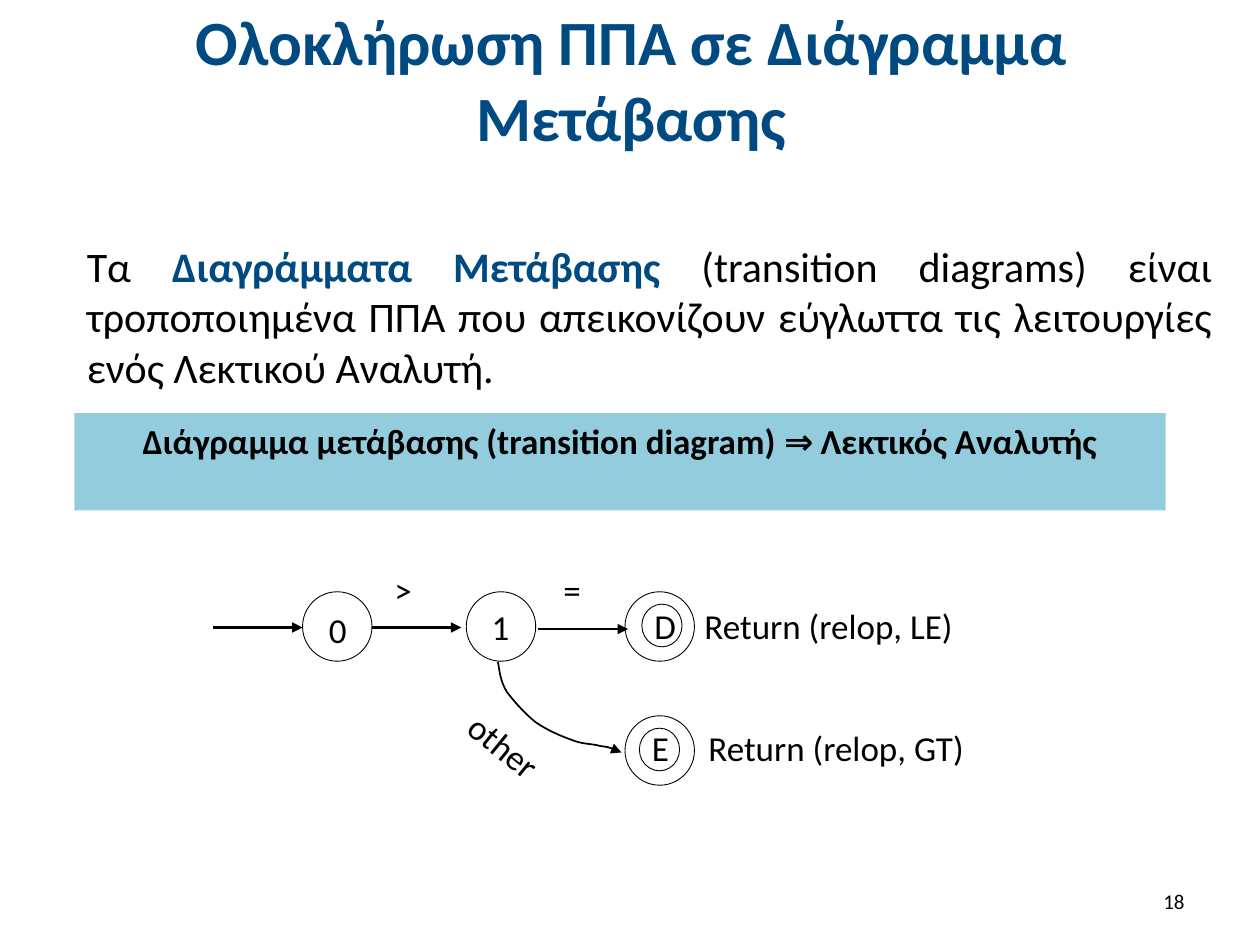
from lxml import etree
from pptx import Presentation
from pptx.dml.color import RGBColor
from pptx.enum.shapes import MSO_CONNECTOR, MSO_SHAPE
from pptx.enum.text import MSO_ANCHOR, PP_ALIGN
from pptx.oxml.ns import qn
from pptx.util import Cm, Pt

BLUE = RGBColor(0x00, 0x4A, 0x82)
BLACK = RGBColor(0, 0, 0)
WHITE = RGBColor(0xFF, 0xFF, 0xFF)
AQUA = RGBColor(0x93, 0xCD, 0xDD)
LEFT, MID, RIGHT, FULL = PP_ALIGN.LEFT, PP_ALIGN.CENTER, PP_ALIGN.RIGHT, PP_ALIGN.JUSTIFY
TOP, MIDDLE = MSO_ANCHOR.TOP, MSO_ANCHOR.MIDDLE
OVAL, LINE = MSO_SHAPE.OVAL, MSO_CONNECTOR.STRAIGHT

RING = 1.4         # diameter of a state
CORE = (0.81, 0.86)  # inner ring of a final state
SIGN = (0.94, 1.12)  # box of a one-letter label


def put_text(slide, box, *runs, size=20, color=BLACK, bold=False,
             align=LEFT, anchor=TOP, fill=None, turn=0, gap=0):
    """Each run is a string, or a (string, colour, bold) tuple."""
    item = slide.shapes.add_textbox(*map(Cm, box))
    item.rotation = turn
    if fill is not None:
        item.fill.solid()
        item.fill.fore_color.rgb = fill
    frame = item.text_frame
    frame.word_wrap = True
    frame.vertical_anchor = anchor
    para = frame.paragraphs[0]
    para.alignment = align
    para.space_before = Pt(gap)
    for part in runs:
        words, tint, heavy = (part, color, bold) if isinstance(part, str) else part
        run = para.add_run()
        run.text = words
        run.font.name = "Calibri"
        run.font.size = Pt(size)
        run.font.bold = heavy
        run.font.color.rgb = tint


def ink(shape, width):
    shape.line.color.rgb = BLACK
    shape.line.width = Pt(width)


def add_head(shape):
    etree.SubElement(shape.line._get_or_add_ln(), qn("a:tailEnd"), type="triangle")


def add_ring(slide, x, y, w, h):
    ring = slide.shapes.add_shape(OVAL, Cm(x), Cm(y), Cm(w), Cm(h))
    ring.shadow.inherit = False
    ring.fill.background()
    ink(ring, 0.5)


def add_arrow(slide, x1, x2, y):
    arrow = slide.shapes.add_connector(LINE, Cm(x1), Cm(y), Cm(x2), Cm(y))
    ink(arrow, 1.25)
    add_head(arrow)
    etree.SubElement(arrow._element.spPr, qn("a:effectLst"))


def add_curve(slide, points):
    """Bezier curve: a start point, then three points for each piece."""
    spots = [(Cm(x), Cm(y)) for x, y in points]
    maker = slide.shapes.build_freeform(*spots[0])
    maker.add_line_segments(spots[1:], close=False)
    curve = maker.convert_to_shape()
    curve.shadow.inherit = False
    curve.fill.background()
    ink(curve, 1)
    add_head(curve)
    # Join every three straight steps into one cubic piece
    steps = list(curve._element.iter(qn("a:lnTo")))
    for i in range(0, len(steps), 3):
        first, *rest = steps[i:i + 3]
        cubic = etree.Element(qn("a:cubicBezTo"))
        first.addprevious(cubic)
        for step in (first, *rest):
            cubic.append(step[0])
            step.getparent().remove(step)


def draw_head(slide, x, y, w, h):
    put_text(slide, (x, y, w, h), "Ολοκλήρωση ΠΠΑ σε Διάγραμμα Μετάβασης",
             size=36, color=BLUE, bold=True, align=MID, anchor=MIDDLE)


def draw_body(slide, x, y, w, h):
    put_text(slide, (x, y, w, h), "Τα ", ("Διαγράμματα Μετάβασης ", BLUE, True),
             "(transition diagrams) είναι τροποποιημένα ΠΠΑ που απεικονίζουν "
             "εύγλωττα τις λειτουργίες ενός Λεκτικού Αναλυτή.",
             size=24, align=FULL, gap=12)
    # Coloured band under the paragraph
    put_text(slide, (x, y + 3.61, 22, 1.96),
             "Διάγραμμα μετάβασης (transition diagram) ⇒ Λεκτικός Αναλυτής",
             bold=True, align=MID, fill=AQUA)


def draw_graph(slide, x, y):
    # States: ring corner, offset of the name, final or not
    states = [("0", 1.8, 0.6, 0.28, 0.21, False),
              ("1", 5.1, 0.6, 0.26, 0.16, False),
              ("D", 8.3, 0.6, 0.34, 0.14, True),
              ("E", 8.3, 3.1, 0.29, 0.1, True)]
    for _, sx, sy, dx, _, final in states:
        add_ring(slide, x + sx, y + sy, RING, RING)
        if final:
            add_ring(slide, x + sx + dx, y + sy + 0.25, *CORE)

    # Moves between states
    for x1, x2, dy in ((0, 1.8, 1.32), (3.2, 5, 1.32), (6.55, 8.36, 1.35)):
        add_arrow(slide, x + x1, x + x2, y + dy)
    bend = [(5.74, 2.01),
            (5.77, 2.21), (5.79, 2.41), (5.92, 2.62),
            (6.05, 2.79), (6.27, 3.05), (6.5, 3.23),
            (6.71, 3.38), (7.01, 3.51), (7.21, 3.58),
            (7.44, 3.68), (7.65, 3.66), (7.8, 3.71),
            (7.98, 3.73), (8.1, 3.78), (8.23, 3.84)]
    add_curve(slide, [(x + px, y + py) for px, py in bend])

    # Labels of the moves
    put_text(slide, (x + 4.8, y + 3.2, 2.21, 1.12), "other", fill=WHITE, turn=39.2)
    for sign, dx in ((">", 3.4), ("=", 6.81)):
        put_text(slide, (x + dx, y, *SIGN), sign, fill=WHITE)

    # Names and results
    for name, sx, sy, dx, dy, _ in states:
        put_text(slide, (x + sx + dx, y + sy + dy, *SIGN), name)
    for code, dx, dy in (("LE", 9.65, 0.74), ("GT", 9.73, 3.2)):
        put_text(slide, (x + dx, y + dy, 6.07, 1.12), f"Return (relop, {code})")


def draw_foot(slide, x, y, w, h):
    put_text(slide, (x, y, w, h), "18", size=12, align=RIGHT, anchor=MIDDLE)


def main():
    deck = Presentation()
    deck.slide_width, deck.slide_height = Cm(25.4), Cm(19.05)
    slide = deck.slides.add_slide(deck.slide_layouts[6])
    draw_head(slide, 1.3, 0.33, 22.86, 2.51)
    draw_body(slide, 1.5, 4.72, 23.19, 3)
    draw_graph(slide, 4.3, 11.33)
    draw_foot(slide, 18.21, 17.65, 5.92, 1.02)
    deck.save("out.pptx")


if __name__ == "__main__":
    main()
